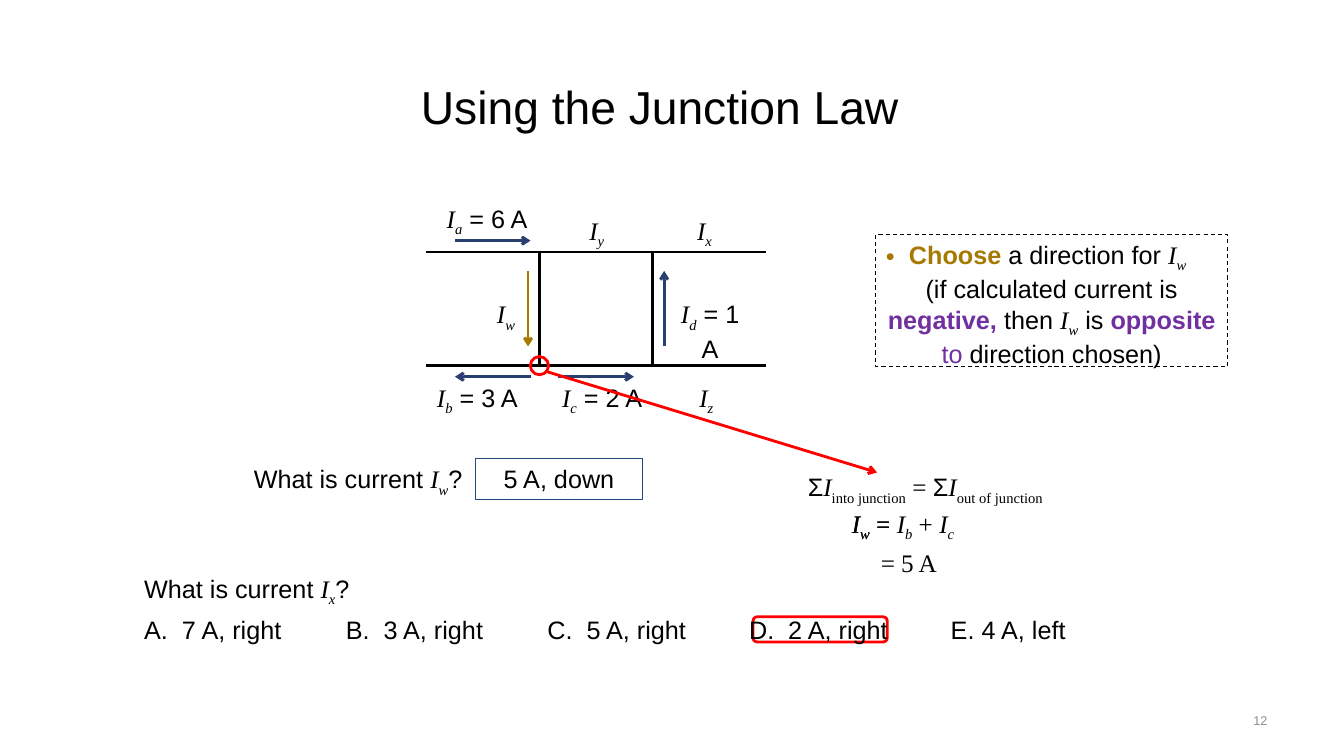
"""Build the junction law slide: circuit, worked answer and quiz."""
import pptx
import pptx.util
import pptx.dml.color
import pptx.enum.dml
import pptx.enum.shapes
import pptx.enum.text
import pptx.oxml.ns
from lxml import etree

RGB = pptx.dml.color.RGBColor
BLACK, WHITE = RGB(0, 0, 0), RGB(255, 255, 255)
NAVY, BLUE = RGB(0x29, 0x3F, 0x6F), RGB(0x1F, 0x49, 0x7D)
GOLD, PURPLE = RGB(0xA6, 0x7A, 0x00), RGB(0x70, 0x30, 0xA0)
RED, GREY = RGB(0xFF, 0, 0), RGB(0x8C, 0x8C, 0x8C)
Pt, qn = pptx.util.Pt, pptx.oxml.ns.qn
FORM = pptx.enum.shapes.MSO_SHAPE
ALIGN, ANCHOR = pptx.enum.text.PP_ALIGN, pptx.enum.text.MSO_ANCHOR
CELL = pptx.util.Inches(0.125)

deck = pptx.Presentation()
deck.slide_width = pptx.util.Inches(13.33)
deck.slide_height = pptx.util.Inches(7.5)
slide = deck.slides.add_slide(deck.slide_layouts[6])
slide.background.fill.solid()
slide.background.fill.fore_color.rgb = WHITE
shapes = slide.shapes


def write(para, align, runs, size=18):
    """Add runs of (text, style, colour); styles are r roman, i italic, b bold, s subscript."""
    para.alignment = align
    for text, style, tint in runs:
        run = para.add_run()
        run.text = text
        font = run.font
        font.name = "Times New Roman" if "r" in style else "Arial"
        font.size, font.color.rgb = Pt(size), tint
        font.italic, font.bold = "i" in style, "b" in style
        if "s" in style:
            run._r.get_or_add_rPr().set("baseline", "-25000")


def join(start, end, tint, head=True):
    """Draw a straight line between two grid points."""
    line = shapes.add_connector(
        pptx.enum.shapes.MSO_CONNECTOR.STRAIGHT, *[int(v * CELL) for v in start + end])
    line.line.color.rgb, line.line.width = tint, Pt(2)
    if head:
        etree.SubElement(line.line._get_or_add_ln(), qn("a:tailEnd"), type="arrow")
    etree.SubElement(line._element.spPr, qn("a:effectLst"))


amp = {k: [("I", "ri", BLACK), (k, "ris", BLACK)] for k in "abcdwxyz"}
left, top, side = 33.8, 20, 9
low = top + side

for y in (low, top):
    join((left, y), (left + 3 * side, y), BLACK, False)
for start, end, tint in [
    ((36.1, 19.1), (42.1, 19.1), NAVY),
    ((42.1, 29.9), (36.1, 29.9), NAVY),
    ((44.3, 29.9), (50.3, 29.9), NAVY),
    ((52.7, 27.5), (52.7, 21.5), NAVY),
    ((41.9, 21.5), (41.9, 27.5), GOLD),
]:
    join(start, end, tint)

frames = {}
for name, form, area, tint, width in [
    ("loop", FORM.RECTANGLE, (left + side, top, side, side), BLACK, 2),
    ("choice", FORM.ROUNDED_RECTANGLE, (59.75, 48.95, 10.65, 2), RED, 2),
    ("note", FORM.RECTANGLE, (69.5, 18.6, 27.9, 10.5), BLACK, 0.75),
    ("answer", FORM.RECTANGLE, (37.75, 36.4, 13.2, 3.25), BLUE, 0.75),
    ("node", FORM.OVAL, (42.08, 28.3, 1.45, 1.45), RED, 2),
]:
    shape = shapes.add_shape(form, *[int(v * CELL) for v in area])
    shape.shadow.inherit = False
    shape.fill.background()
    shape.line.color.rgb, shape.line.width = tint, Pt(width)
    shape.text_frame.word_wrap = True
    shape.text_frame.vertical_anchor = ANCHOR.TOP
    frames[name] = shape

write(frames["answer"].text_frame.paragraphs[0], ALIGN.CENTER, [("5 A, down", "", BLACK)])
frames["note"].line.dash_style = pptx.enum.dml.MSO_LINE.DASH
note = frames["note"].text_frame
lead = note.paragraphs[0]
write(lead, ALIGN.LEFT, [("Choose ", "b", GOLD), ("a direction for ", "", BLACK), *amp["w"]])
props = lead._p.get_or_add_pPr()
inset = pptx.util.Inches(0.23)
props.set("marL", str(inset))
props.set("indent", str(-inset))
etree.SubElement(props, qn("a:buFont"), typeface="Arial")
etree.SubElement(props, qn("a:buChar"), char="•")
write(note.add_paragraph(), ALIGN.CENTER, [
    ("(if calculated current is ", "", BLACK), ("negative, ", "b", PURPLE),
    ("then ", "", BLACK), *amp["w"], (" is ", "", BLACK), ("opposite", "b", PURPLE),
    (" to ", "", PURPLE), ("direction chosen)", "", BLACK)])

ask, end = ("What is current ", "", BLACK), ("?", "", BLACK)
quiz = "A.  7 A, right\tB.  3 A, right\tC.  5 A, right\tD.  2 A, right\tE. 4 A, left"
mid, near = ALIGN.CENTER, ALIGN.LEFT
for x, y, width, align, runs in [
    (34.15, 15.75, 9, mid, [*amp["a"], (" = 6 A", "", BLACK)]),
    (33.35, 29.95, 9.05, mid, [*amp["b"], (" = 3 A", "", BLACK)]),
    (43.7, 29.95, 8.15, mid, [*amp["c"], (" = 2 A", "", BLACK)]),
    (52.7, 23.3, 7.3, mid, [*amp["d"], (" = 1 A", "", BLACK)]),
    (38.65, 23.3, 3.3, near, amp["w"]),
    (52.25, 16.7, 7.3, mid, amp["x"]),
    (43.7, 16.7, 7.3, mid, amp["y"]),
    (54.7, 29.95, 4, near, amp["z"]),
    (19.35, 36.4, 25, near, [ask, *amp["w"], end]),
    (10.65, 45.1, 19.5, near, [ask, *amp["x"], end]),
    (10.65, 48.35, 77.1, near, [(quiz, "", BLACK)]),
    (60.3, 37.05, 26.25, mid, [
        ("Σ", "", BLACK), ("I", "ri", BLACK), ("into junction", "rs", BLACK),
        (" = ", "r", BLACK), ("Σ", "", BLACK), ("I", "ri", BLACK),
        ("out of junction", "rs", BLACK)]),
    (66.8, 39.95, 5.2, near, [*amp["w"], (" =", "r", BLACK)]),
    (66.8, 39.95, 12.5, near, [
        *amp["w"], (" = ", "r", BLACK), *amp["b"], (" + ", "r", BLACK), *amp["c"]]),
    (69.1, 43.05, 9, near, [("= 5 A", "r", BLACK)]),
]:
    high = 5.7 if runs[:2] == amp["d"] else 3.2
    box = shapes.add_textbox(*[int(v * CELL) for v in (x, y, width, high)])
    box.text_frame.word_wrap = True
    para = box.text_frame.paragraphs[0]
    write(para, align, runs)
    if runs[0][0] == quiz:
        tabs = etree.SubElement(para._p.get_or_add_pPr(), qn("a:tabLst"))
        for step in range(1, 5):
            etree.SubElement(tabs, qn("a:tab"), pos=str(16 * step * CELL), algn="l")

for area, align, text, size, tint in [
    ((25.35, 4.65, 54, 7.5), mid, "Using the Junction Law", 33, BLACK),
    ((76.45, 55.6, 24.9, 3.2), ALIGN.RIGHT, "12", 9, GREY),
]:
    box = shapes.add_textbox(*[int(v * CELL) for v in area])
    box.text_frame.word_wrap = True
    box.text_frame.vertical_anchor = ANCHOR.MIDDLE
    write(box.text_frame.paragraphs[0], align, [(text, "", tint)], size)

join((43.4, 29.5), (69.6, 37.5), RED)
deck.save("out.pptx")
